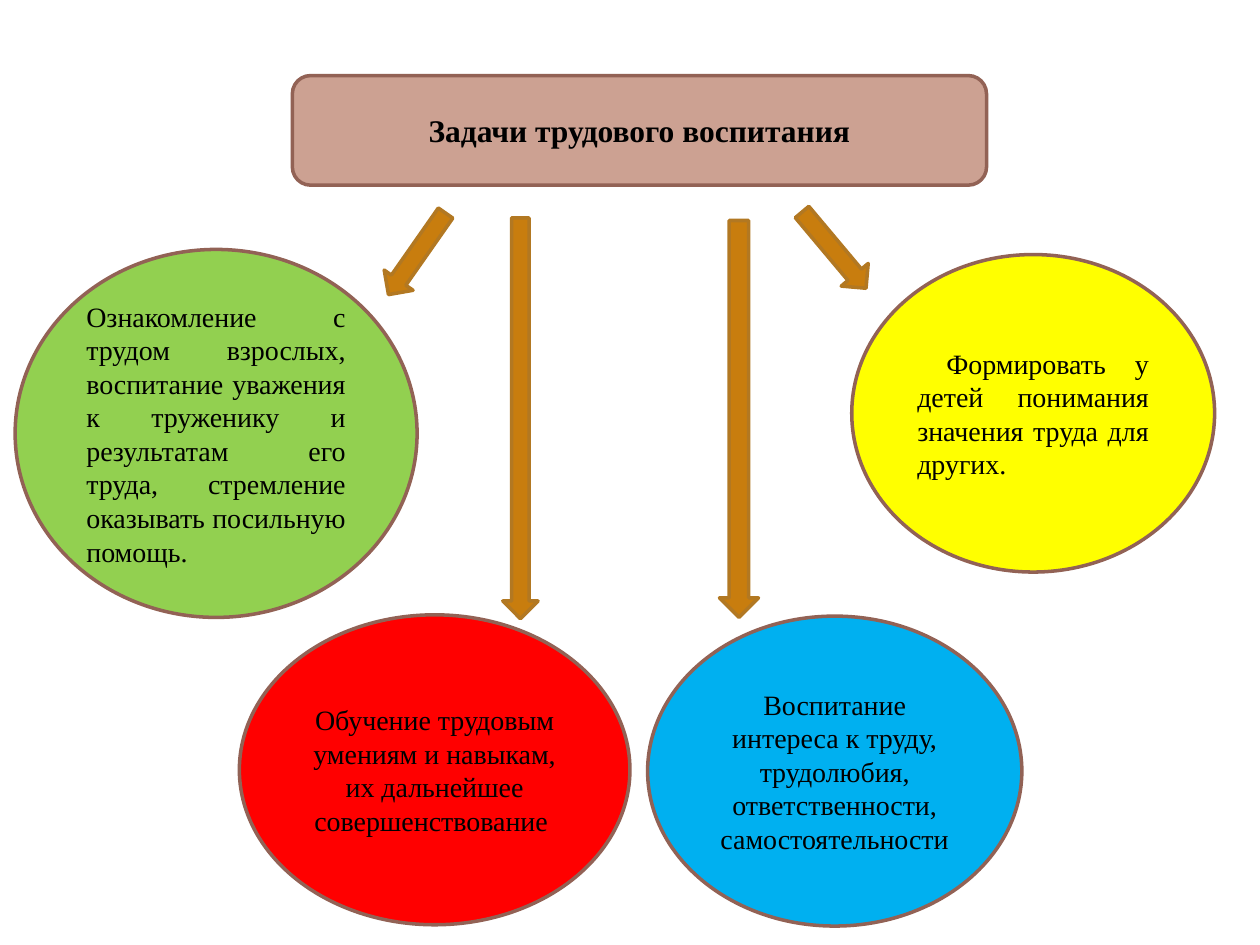
from pptx import Presentation
from pptx.dml.color import RGBColor
from pptx.enum import shapes, text
from pptx.util import Inches, Pt

KIND = shapes.MSO_SHAPE
CENTER = text.PP_ALIGN.CENTER
JUSTIFY = text.PP_ALIGN.JUSTIFY

deck = Presentation()
deck.slide_width = Inches(10)
deck.slide_height = Inches(7.5)
slide = deck.slides.add_slide(deck.slide_layouts[6])


def add_figure(kind, place, fill, line):
    figure = slide.shapes.add_shape(kind, *[Inches(n) for n in place])
    figure.shadow.inherit = False
    figure.fill.solid()
    figure.fill.fore_color.rgb = RGBColor.from_string(fill)
    figure.line.color.rgb = RGBColor.from_string(line)
    figure.line.width = Pt(2)
    return figure


def write(figure, words, size=16, bold=False, align=CENTER, color="000000"):
    frame = figure.text_frame
    frame.word_wrap = True
    frame.vertical_anchor = text.MSO_ANCHOR.MIDDLE
    paragraph = frame.paragraphs[0]
    paragraph.alignment = align
    run = paragraph.add_run()
    run.text = words
    run.font.name = "Times New Roman"
    run.font.size = Pt(size)
    run.font.bold = bold
    run.font.color.rgb = RGBColor.from_string(color)


heading = add_figure(KIND.FLOWCHART_ALTERNATE_PROCESS, (2.32, 0.6, 5.51, 0.87), "CCA192", "926255")
write(heading, "Задачи трудового воспитания", size=18, bold=True)

tasks = [
    ((0.12, 1.98, 3.19, 2.92), "92D050", JUSTIFY,
     "Ознакомление с трудом взрослых, воспитание уважения к труженику и "
     "результатам его труда, стремление оказывать посильную помощь."),
    ((5.14, 4.89, 2.97, 2.46), "00B0F0", CENTER,
     "Воспитание интереса к труду, трудолюбия, ответственности, самостоятельности"),
    ((1.9, 4.88, 3.1, 2.46), "FF0000", CENTER,
     "Обучение трудовым умениям и навыкам, их дальнейшее совершенствование "),
    ((6.76, 2.02, 2.88, 2.52), "FFFF00", JUSTIFY,
     " Формировать у детей понимания значения труда для других."),
]
for place, fill, align, words in tasks:
    task = add_figure(KIND.OVAL, place, fill, "926255")
    write(task, words, align=align)

arrows = [
    ((3.99, 1.73, 0.28, 3.18), 0),
    ((5.71, 1.75, 0.31, 3.15), 0),
    ((6.48, 1.59, 0.28, 0.79), -40),
    ((3.17, 1.62, 0.28, 0.79), 35),
]
for place, angle in arrows:
    arrow = add_figure(KIND.DOWN_ARROW, place, "C87D0E", "B27822")
    arrow.rotation = angle

deck.save("out.pptx")
